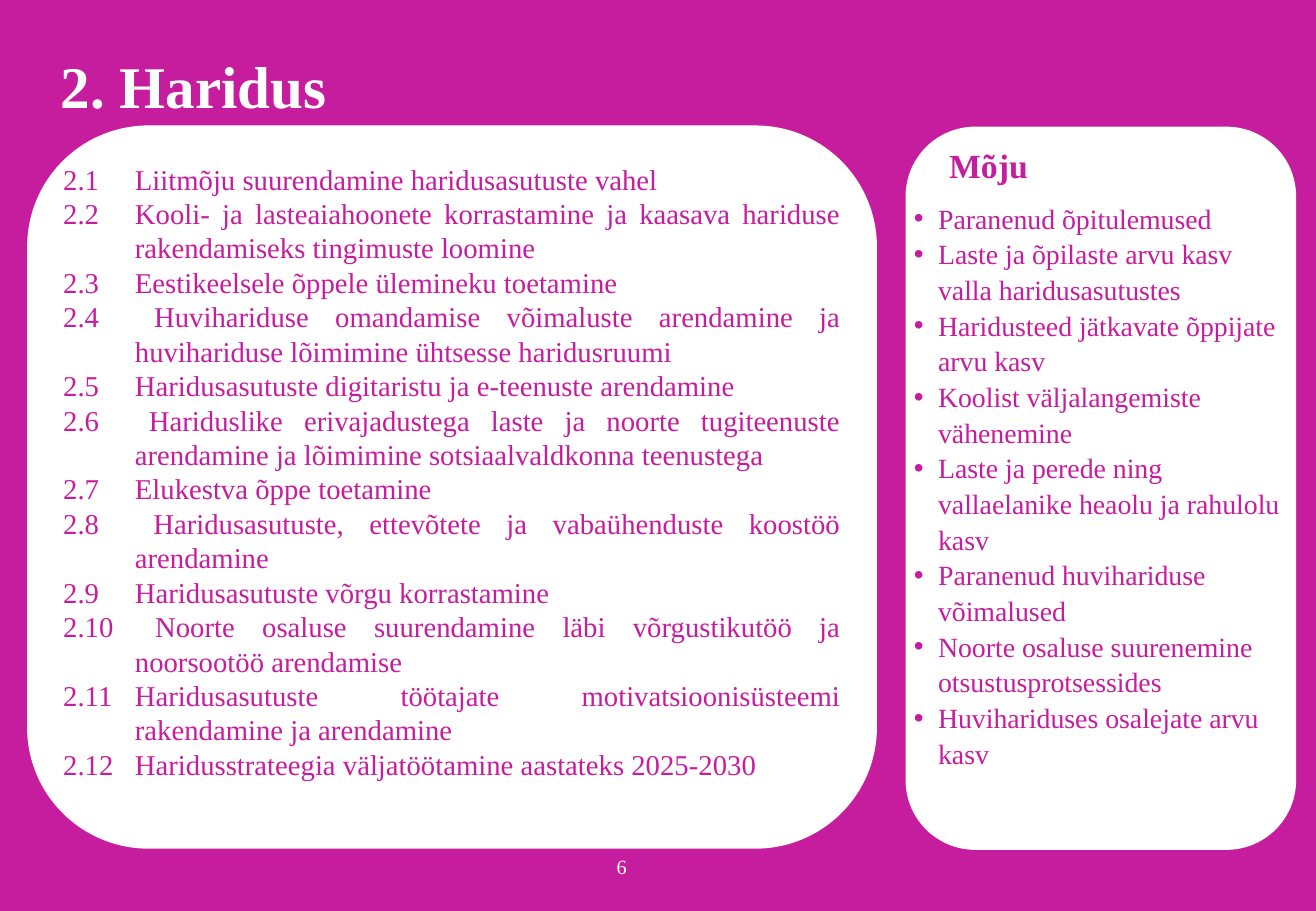
from dataclasses import dataclass

from lxml import etree
from pptx import Presentation
from pptx.dml.color import RGBColor
from pptx.enum.shapes import MSO_SHAPE
from pptx.enum.text import MSO_ANCHOR, MSO_AUTO_SIZE, PP_ALIGN
from pptx.oxml.ns import qn
from pptx.util import Inches, Pt

ROUNDED = MSO_SHAPE.ROUNDED_RECTANGLE
MIDDLE = MSO_ANCHOR.MIDDLE
NO_AUTOFIT = MSO_AUTO_SIZE.NONE
LEFT, CENTER, JUSTIFY = PP_ALIGN.LEFT, PP_ALIGN.CENTER, PP_ALIGN.JUSTIFY

MAGENTA = RGBColor(0xC6, 0x1C, 0x9E)
WHITE = RGBColor(0xFF, 0xFF, 0xFF)
FONT = "Times New Roman"
INSET = 0.05


@dataclass(frozen=True)
class Box:
    left: float
    top: float
    width: float
    height: float


@dataclass(frozen=True)
class Panel:
    box: Box
    corner: float


@dataclass(frozen=True)
class TextStyle:
    size: float
    color: RGBColor = MAGENTA
    bold: bool = False
    align: PP_ALIGN = LEFT
    margin: float = 0
    hanging: float = 0
    line_spacing: float = 1
    space_after: float = 0
    bullet: str = ""


PANELS = [
    Panel(Box(0.23, 1.04, 6.98, 5.94), 0.167),
    Panel(Box(7.46, 1.05, 3.2, 5.94), 0.177),
]

TITLE = TextStyle(35, WHITE, bold=True, line_spacing=0.9)
GOAL = TextStyle(17, align=JUSTIFY, margin=0.59, hanging=0.59)
IMPACT_HEADING = TextStyle(20, bold=True, margin=0.29, line_spacing=1.07, space_after=8)
IMPACT = TextStyle(16.5, margin=0.2, hanging=0.2, line_spacing=1.07, bullet="•")
PAGE_NUMBER = TextStyle(12, WHITE, align=CENTER)

GOALS = [
    "2.1 \tLiitmõju suurendamine haridusasutuste vahel",
    "2.2\tKooli- ja lasteaiahoonete korrastamine ja kaasava hariduse "
    "rakendamiseks tingimuste loomine",
    "2.3 \tEestikeelsele õppele ülemineku toetamine",
    "2.4 \tHuvihariduse omandamise võimaluste arendamine ja huvihariduse "
    "lõimimine ühtsesse haridusruumi",
    "2.5\tHaridusasutuste digitaristu ja e-teenuste arendamine",
    "2.6 \tHariduslike erivajadustega laste ja noorte tugiteenuste arendamine "
    "ja lõimimine sotsiaalvaldkonna teenustega",
    "2.7 \tElukestva õppe toetamine",
    "2.8 \tHaridusasutuste, ettevõtete ja vabaühenduste koostöö arendamine",
    "2.9 \tHaridusasutuste võrgu korrastamine",
    "2.10 \tNoorte osaluse suurendamine läbi võrgustikutöö ja noorsootöö arendamise",
    "2.11\tHaridusasutuste töötajate motivatsioonisüsteemi rakendamine ja arendamine",
    "2.12 \tHaridusstrateegia väljatöötamine aastateks 2025-2030",
]

IMPACTS = [
    "Paranenud õpitulemused",
    "Laste ja õpilaste arvu kasv valla haridusasutustes",
    "Haridusteed jätkavate õppijate arvu kasv",
    "Koolist väljalangemiste vähenemine",
    "Laste ja perede ning vallaelanike heaolu ja rahulolu kasv",
    "Paranenud huvihariduse võimalused",
    "Noorte osaluse suurenemine otsustusprotsessides",
    "Huvihariduses osalejate arvu kasv",
]


def place(shape, box: Box) -> None:
    shape.left, shape.top = Inches(box.left), Inches(box.top)
    shape.width, shape.height = Inches(box.width), Inches(box.height)


def add_panel(slide, panel: Panel):
    box = panel.box
    shape = slide.shapes.add_shape(
        ROUNDED, Inches(box.left), Inches(box.top), Inches(box.width), Inches(box.height)
    )
    shape.adjustments[0] = panel.corner
    shape.shadow.inherit = False
    shape.fill.solid()
    shape.fill.fore_color.rgb = WHITE
    shape.line.color.rgb = WHITE
    shape.line.width = Pt(1)
    return shape


def style_paragraph(paragraph, style: TextStyle) -> None:
    paragraph.alignment = style.align
    paragraph.line_spacing = style.line_spacing
    paragraph.space_before = Pt(0)
    paragraph.space_after = Pt(style.space_after)
    properties = paragraph._p.get_or_add_pPr()
    properties.set("marL", str(Inches(style.margin)))
    properties.set("indent", str(-Inches(style.hanging)))
    if style.bullet:
        etree.SubElement(properties, qn("a:buChar")).set("char", style.bullet)
    else:
        etree.SubElement(properties, qn("a:buNone"))
    font = paragraph.font
    font.name = FONT
    font.size = Pt(style.size)
    font.bold = style.bold
    font.color.rgb = style.color


def write_text(
    shape,
    box: Box,
    lines: list[tuple[str, TextStyle]],
    wrap: bool = True,
    bottom_inset: float = INSET,
) -> None:
    place(shape, box)
    frame = shape.text_frame
    frame.word_wrap = wrap
    frame.auto_size = NO_AUTOFIT
    frame.vertical_anchor = MIDDLE
    frame.margin_left = frame.margin_right = frame.margin_top = Inches(INSET)
    frame.margin_bottom = Inches(bottom_inset)
    frame.text = "\n".join(text for text, _ in lines)
    for paragraph, (_, style) in zip(frame.paragraphs, lines):
        style_paragraph(paragraph, style)


def main() -> None:
    presentation = Presentation()
    presentation.slide_width = Inches(10.83)
    presentation.slide_height = Inches(7.5)
    slide = presentation.slides.add_slide(presentation.slide_layouts[3])
    slide.background.fill.solid()
    slide.background.fill.fore_color.rgb = MAGENTA

    title, goals, impacts = slide.placeholders
    for panel in PANELS:
        title.element.addprevious(add_panel(slide, panel).element)

    write_text(title, Box(0.45, 0.42, 9.96, 0.63), [("2. Haridus", TITLE)])
    write_text(
        goals,
        Box(0.47, 1.25, 6.5, 5.55),
        [(goal, GOAL) for goal in GOALS],
        bottom_inset=0.34,
    )
    write_text(
        impacts,
        Box(7.47, 1.1, 3.13, 5.31),
        [("Mõju", IMPACT_HEADING)] + [(impact, IMPACT) for impact in IMPACTS],
    )
    page_number = slide.shapes.add_textbox(0, 0, 0, 0)
    write_text(page_number, Box(5.02, 6.98, 0.19, 0.3), [("6", PAGE_NUMBER)], wrap=False)

    presentation.save("out.pptx")


if __name__ == "__main__":
    main()
